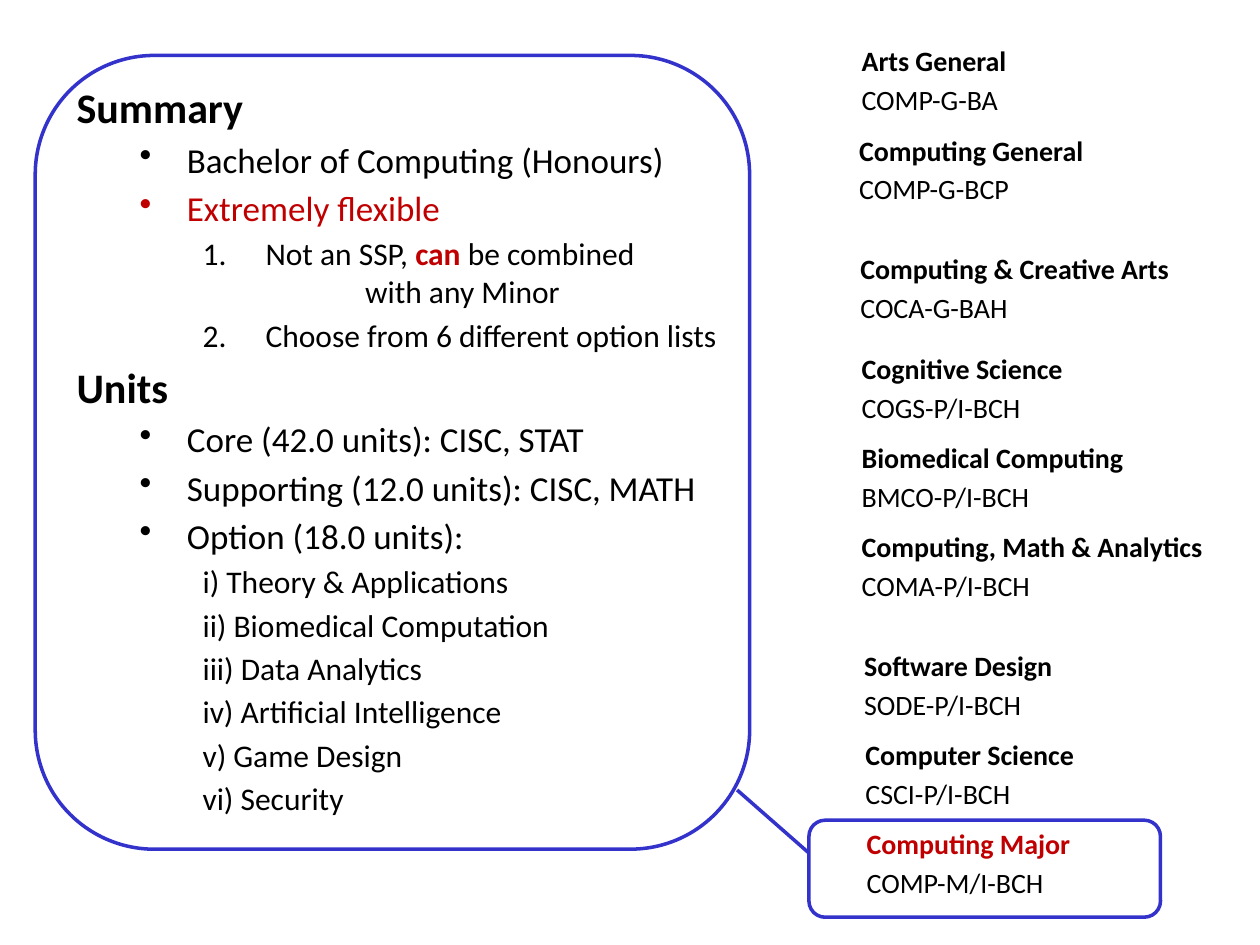
import pptx
import pptx.util
import pptx.dml.color
import pptx.enum.shapes
import pptx.enum.text
import pptx.oxml
import lxml.etree

COLOURS = {"text": "000000", "accent": "C00000", "line": "3333CC"}
FONT = "Calibri"
WIDTH, HEIGHT = 10, 7.5
CELL = WIDTH / 100
GAP_SHARE = 0.18
PITCH = 7.07

PROGRAMME_GROUPS = [
    (3.0, [
        ("Arts General", "COMP-G-BA", 67.4, 13.7),
        ("Computing General", "COMP-G-BCP", 67.2, 20.1),
    ]),
    (19.5, [("Computing & Creative Arts", "COCA-G-BAH", 67.3, 26.9)]),
    (27.4, [
        ("Cognitive Science", "COGS-P/I-BCH", 67.4, 18.2),
        ("Biomedical Computing", "BMCO-P/I-BCH", 67.4, 23.1),
        ("Computing, Math & Analytics", "COMA-P/I-BCH", 67.4, 29.5),
    ]),
    (51.0, [
        ("Software Design", "SODE-P/I-BCH", 67.6, 17.2),
        ("Computer Science", "CSCI-P/I-BCH", 67.7, 18.8),
        ("Computing Major", "COMP-M/I-BCH", 67.8, 18.9),
    ]),
]
HIGHLIGHT = "Computing Major"
OPTIONS = [
    "i) Theory & Applications", "ii) Biomedical Computation", "iii) Data Analytics",
    "iv) Artificial Intelligence", "v) Game Design", "vi) Security",
]


def grid(cells):
    """Turn a count of grid cells into a length."""
    return pptx.util.Inches(cells * CELL)


def colour(name):
    """Look up a named colour."""
    return pptx.dml.color.RGBColor.from_string(COLOURS[name])


def add_span(para, text, size=16, bold=False, color="text"):
    """Add formatted text to a paragraph."""
    span = para.add_run()
    span.text = text
    span.font.name = FONT
    span.font.size = pptx.util.Pt(size)
    span.font.bold = bold
    span.font.color.rgb = colour(color)


def add_para(box, spans, size=16, level=0, margin=0, hang=0, marker=None, start=1, spaced=True):
    """Add a paragraph of (text, format) spans, with an optional bullet or number."""
    frame = box.text_frame
    first = not frame.paragraphs[0].runs
    para = frame.paragraphs[0] if first else frame.add_paragraph()
    para.level = level
    gap = 0 if first or not spaced else size * GAP_SHARE
    para.space_before = pptx.util.Pt(gap)
    properties = para._p.get_or_add_pPr()
    properties.set("marL", str(grid(margin)))
    properties.set("indent", str(-grid(hang)))
    tags = {"bullet": "a:buChar", "number": "a:buAutoNum"}
    mark = lxml.etree.SubElement(properties, pptx.oxml.ns.qn(tags.get(marker, "a:buNone")))
    if marker == "bullet":
        mark.set("char", "•")
    elif marker == "number":
        mark.set("type", "arabicPeriod")
        mark.set("startAt", str(start))
    for text, style in spans:
        add_span(para, text, size=size, **style)


def add_box(page, left, top, width, height, wrap):
    """Add an empty text box on the grid."""
    box = page.shapes.add_textbox(*map(grid, (left, top, width, height)))
    box.text_frame.word_wrap = wrap
    box.text_frame.auto_size = pptx.enum.text.MSO_AUTO_SIZE.SHAPE_TO_FIT_TEXT
    return box


def set_line(item):
    """Give a shape or connector the frame line."""
    item.line.color.rgb = colour("line")
    item.line.width = pptx.util.Pt(2)


def add_frame(page, left, top, width, height):
    """Add an unfilled rounded frame."""
    kind = pptx.enum.shapes.MSO_SHAPE.ROUNDED_RECTANGLE
    frame = page.shapes.add_shape(kind, *map(grid, (left, top, width, height)))
    frame.shadow.inherit = False
    frame.fill.background()
    set_line(frame)


def add_link(page, *ends):
    """Add a straight connector without a shadow."""
    kind = pptx.enum.shapes.MSO_CONNECTOR.STRAIGHT
    link = page.shapes.add_connector(kind, *map(grid, ends))
    set_line(link)
    lxml.etree.SubElement(link._element.spPr, pptx.oxml.ns.qn("a:effectLst"))


def add_heading(box, text):
    """Add a section heading."""
    add_para(box, [(text, {"bold": True})], size=24)


def add_bullet(box, text, color="text"):
    """Add a bulleted line."""
    add_para(box, [(text, {"color": color})], size=20, level=1, margin=8.75, hang=3.75, marker="bullet")


def add_number(box, spans, start):
    """Add a numbered line."""
    add_para(box, spans, size=18, level=2, margin=15, hang=5, marker="number", start=start)


def add_summary(page):
    """Add the degree summary and its units."""
    box = add_box(page, 5.1, 6, 53.4, 62.2, True)
    add_heading(box, "Summary")
    add_bullet(box, "Bachelor of Computing (Honours)")
    add_bullet(box, "Extremely flexible", color="accent")
    emphasis = {"bold": True, "color": "accent"}
    add_number(box, [("Not an SSP, ", {}), ("can", emphasis), (" be combined", {})], 1)
    add_para(box, [("with any Minor", {})], size=18, level=2, margin=22.9, spaced=False)
    add_number(box, [("Choose from 6 different option lists", {})], 2)
    add_heading(box, "Units")
    for text in ("Core (42.0 units): CISC, STAT", "Supporting (12.0 units): CISC, MATH", "Option (18.0 units):"):
        add_bullet(box, text)
    for text in OPTIONS:
        add_para(box, [(text, {})], size=18, level=2, margin=10)


def add_programme(page, name, code, left, top, width):
    """Add a programme name above its code."""
    box = add_box(page, left, top, width, 6.9, False)
    color = "accent" if name == HIGHLIGHT else "text"
    add_para(box, [(name, {"bold": True, "color": color})])
    add_para(box, [(code, {})])


def main():
    """Build and save the slide."""
    deck = pptx.Presentation()
    deck.slide_width = pptx.util.Inches(WIDTH)
    deck.slide_height = pptx.util.Inches(HEIGHT)
    page = deck.slides.add_slide(deck.slide_layouts[6])
    add_summary(page)
    for first_row, programmes in PROGRAMME_GROUPS:
        for index, (name, code, left, width) in enumerate(programmes):
            add_programme(page, name, code, left, first_row + index * PITCH, width)
    add_link(page, 58.5, 62.7, 64.2, 67.7)
    add_frame(page, 64.2, 65.1, 27.9, 7.7)
    add_frame(page, 2.8, 4.4, 56.7, 63)
    deck.save("out.pptx")


if __name__ == "__main__":
    main()
